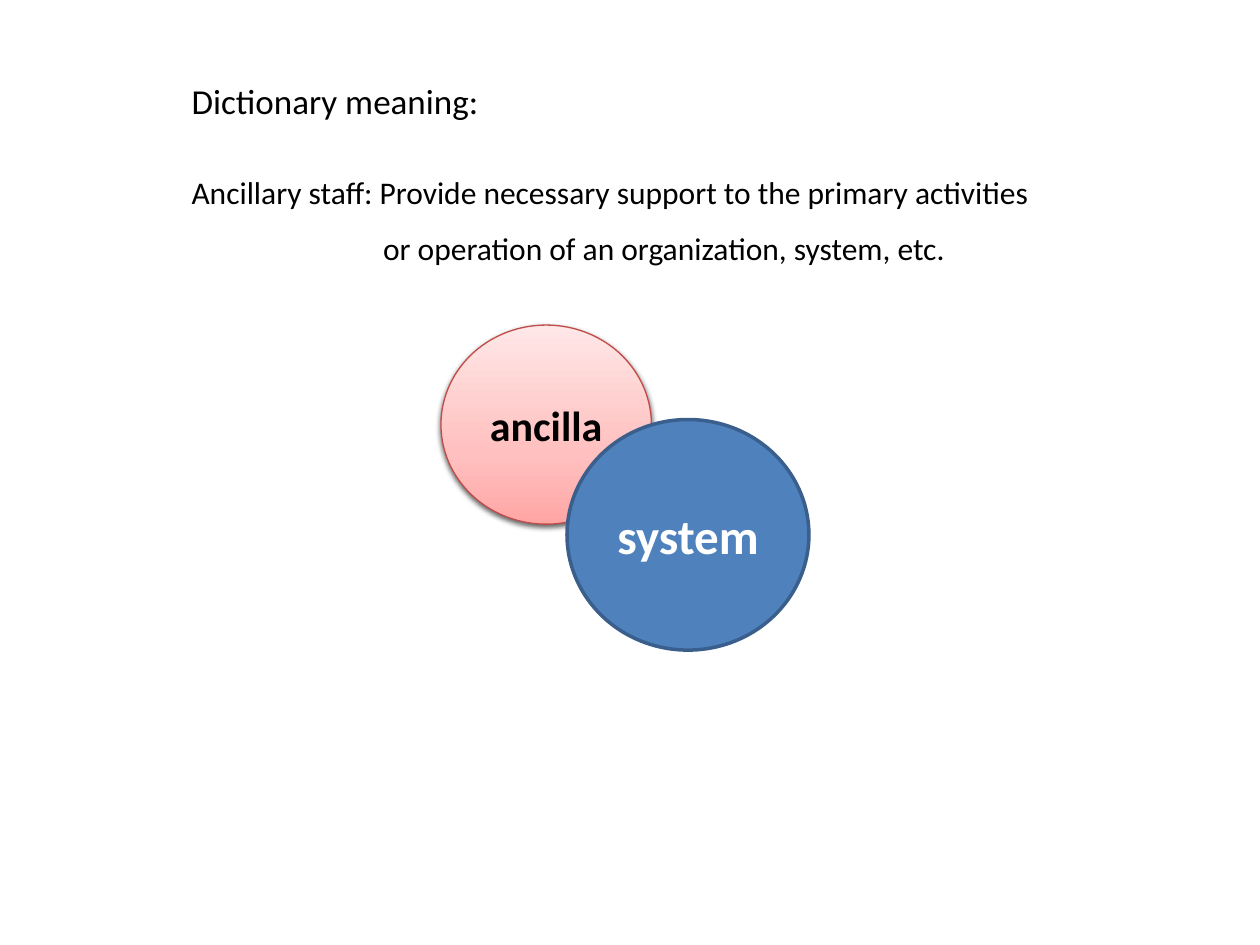
from copy import deepcopy
from lxml.etree import SubElement
from pptx import Presentation
from pptx.dml.color import RGBColor
from pptx.enum.shapes import MSO_SHAPE as Shape
from pptx.enum.text import MSO_ANCHOR as Anchor, MSO_AUTO_SIZE as Fit, PP_ALIGN as Align
from pptx.oxml.ns import qn
from pptx.util import Inches, Pt

TITLE = "Dictionary meaning:"
BODY = [
    ("Ancillary staff: Provide necessary support to the primary activities", 0),
    ("or operation of an organization, system, etc.", 1.52),
]
PINK = [(0, "FFA6A5"), (0.35, "FFC0BF"), (1, "FFE7E7")]
DISCS = [
    ("ancilla", (3.5, 2.58, 1.67, 1.58), PINK, ("BF4C48", 0.75), (24, "000000")),
    ("system", (4.5, 3.33, 1.92, 1.83), "4F81BD", ("3A5F8C", 2), (28, "FFFFFF")),
]


def color(code):
    return RGBColor.from_string(code)


def style(par, size, code="000000", bold=False):
    for run in par.runs:
        font = run.font
        font.name, font.size, font.bold = "Calibri", Pt(size), bold
        font.color.rgb = color(code)


def place(shape, box):
    shape.left, shape.top, shape.width, shape.height = map(Inches, box)
    frame = shape.text_frame
    frame.auto_size = Fit.NONE
    frame.vertical_anchor = Anchor.TOP
    return frame


def blend(shape, stops):
    shape.fill.gradient()
    shape.fill.gradient_angle = 90
    group = shape._element.spPr.find(".//" + qn("a:gsLst"))
    group.insert(1, deepcopy(group[0]))
    for stop, (spot, code) in zip(shape.fill.gradient_stops, stops):
        stop.position = spot
        stop.color.rgb = color(code)


def shade(shape):
    effects = shape._element.spPr.find(qn("a:effectLst"))
    outer = SubElement(effects, qn("a:outerShdw"), blurRad=str(Pt(3.1)),
                       dist=str(Pt(1.6)), dir="5400000", rotWithShape="0")
    tint = SubElement(outer, qn("a:srgbClr"), val="000000")
    SubElement(tint, qn("a:alpha"), val="60000")


def add_disc(slide, label, box, fill, line, text):
    disc = slide.shapes.add_shape(Shape.OVAL, *map(Inches, box))
    disc.shadow.inherit = False
    if isinstance(fill, str):
        disc.fill.solid()
        disc.fill.fore_color.rgb = color(fill)
    else:
        blend(disc, fill)
        shade(disc)
    disc.line.color.rgb = color(line[0])
    disc.line.width = Pt(line[1])
    frame = disc.text_frame
    frame.text = label
    frame.vertical_anchor = Anchor.MIDDLE
    frame.paragraphs[0].alignment = Align.CENTER
    style(frame.paragraphs[0], *text, bold=True)


def main():
    deck = Presentation()
    deck.slide_width, deck.slide_height = Inches(10), Inches(7.5)
    slide = deck.slides.add_slide(deck.slide_layouts[1])

    frame = place(slide.shapes.title, (1.42, 0.58, 2.5, 0.44))
    frame.word_wrap = False
    frame.text = TITLE
    frame.paragraphs[0].alignment = Align.LEFT
    style(frame.paragraphs[0], 20)

    frame = place(slide.placeholders[1], (1.42, 1.17, 7.83, 1.01))
    frame.text = "\n".join(text for text, _ in BODY)
    for par, (_, inset) in zip(frame.paragraphs, BODY):
        par.line_spacing = 1.5
        par.space_before = Pt(0)
        props = par._p.get_or_add_pPr()
        props.set("marL", str(Inches(inset)))
        props.set("indent", "0")
        SubElement(props, qn("a:buNone"))
        style(par, 18)

    for disc in DISCS:
        add_disc(slide, *disc)
    deck.save("out.pptx")


if __name__ == "__main__":
    main()
